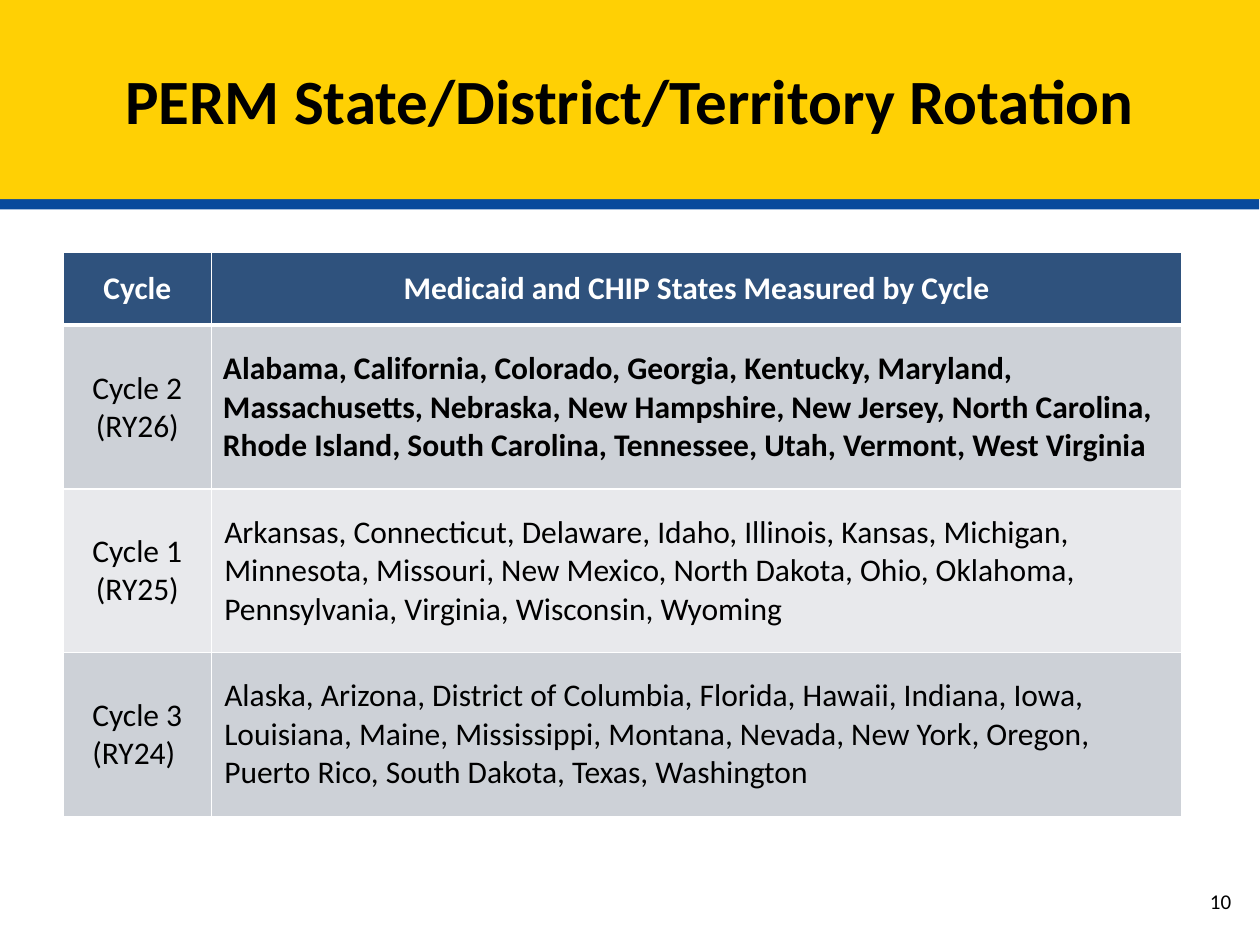
import pptx
import pptx.util
import pptx.dml.color
import pptx.enum.shapes
import pptx.enum.text
import pptx.oxml
import pptx.oxml.ns

Inches = pptx.util.Inches
Pt = pptx.util.Pt
RGBColor = pptx.dml.color.RGBColor
ALIGN = pptx.enum.text.PP_ALIGN
MIDDLE = pptx.enum.text.MSO_ANCHOR.MIDDLE
THEME = {
    "font": "Calibri",
    "banner": "FFD004", "banner_edge": "084A9C",
    "header": "2F527D", "bands": ["CDD1D7", "E8E9EC"],
    "ink": "000000", "paper": "FFFFFF",
    "title": Pt(36), "body": Pt(18), "footer": Pt(12),
}


def write(frame, lines, align, size, bold=False, color="ink"):
    font_format = {"name": THEME["font"], "size": THEME[size], "bold": bold}
    for index, line in enumerate(lines):
        paragraph = frame.add_paragraph() if index else frame.paragraphs[0]
        paragraph.alignment = align
        run = paragraph.add_run()
        run.text = line
        for attribute, value in font_format.items():
            setattr(run.font, attribute, value)
        run.font.color.rgb = RGBColor.from_string(THEME[color])


def add_borders(cell, widths):
    for position, (side, width) in enumerate(widths.items()):
        border = pptx.oxml.parse_xml(
            f'<a:ln{side} {pptx.oxml.ns.nsdecls("a")} w="{Pt(width)}"><a:solidFill>'
            f'<a:srgbClr val="{THEME["paper"]}"/></a:solidFill></a:ln{side}>')
        cell._tc.get_or_add_tcPr().insert(position, border)


deck = pptx.Presentation()
deck.slide_width, deck.slide_height = Inches(10), Inches(7.5)
slide = deck.slides.add_slide(deck.slide_layouts[6])

banner = slide.shapes.add_shape(
    pptx.enum.shapes.MSO_SHAPE.RECTANGLE, 0, 0, Inches(10), Inches(1.58))
banner.fill.solid()
banner.fill.fore_color.rgb = RGBColor.from_string(THEME["banner"])
banner.line.fill.background()
banner.shadow.inherit = False
banner_effects = banner._element.spPr.find(pptx.oxml.ns.qn("a:effectLst"))
banner_effects.append(pptx.oxml.parse_xml(
    f'<a:outerShdw {pptx.oxml.ns.nsdecls("a")} blurRad="0" dist="{Pt(6)}" '
    f'dir="{94 * 60000}" algn="t" rotWithShape="0">'
    f'<a:srgbClr val="{THEME["banner_edge"]}"/></a:outerShdw>'))
banner.text_frame.word_wrap = True
banner.text_frame.vertical_anchor = MIDDLE
write(banner.text_frame, ["PERM State/District/Territory Rotation"], ALIGN.CENTER, "title", True)

rotation = [
    (["Cycle"], "Medicaid and CHIP States Measured by Cycle"),
    (["Cycle 2", "(RY26)"],
     "Alabama, California, Colorado, Georgia, Kentucky, Maryland, Massachusetts, "
     "Nebraska, New Hampshire, New Jersey, North Carolina, Rhode Island, "
     "South Carolina, Tennessee, Utah, Vermont, West Virginia"),
    (["Cycle 1", "(RY25)"],
     "Arkansas, Connecticut, Delaware, Idaho, Illinois, Kansas, Michigan, Minnesota, "
     "Missouri, New Mexico, North Dakota, Ohio, Oklahoma, Pennsylvania, Virginia, "
     "Wisconsin, Wyoming"),
    (["Cycle 3", "(RY24) "],
     "Alaska, Arizona, District of Columbia, Florida, Hawaii, Indiana, Iowa, "
     "Louisiana, Maine, Mississippi, Montana, Nevada, New York, Oregon, Puerto Rico, "
     "South Dakota, Texas, Washington"),
]
cycles = slide.shapes.add_table(
    len(rotation), 2, Inches(0.5), Inches(2), Inches(8.88), Inches(4.48)).table
for column, width in zip(cycles.columns, [1.18, 7.7]):
    column.width = Inches(width)

for row, (cycle, states) in enumerate(rotation):
    is_header, is_current = row == 0, row == 1
    cycles.rows[row].height = Inches(0.58 if is_header else 1.3)
    band = THEME["header"] if is_header else THEME["bands"][(row - 1) % 2]
    for column, lines in enumerate([cycle, [states]]):
        cell = cycles.cell(row, column)
        insets = [0.1, 0.05, 0.1, 0.05]
        if is_current:
            insets = [0.09 if column else 0.01, 0.01, 0.01, 0]
        for side, inset in zip(["left", "top", "right", "bottom"], insets):
            setattr(cell, f"margin_{side}", Inches(inset))
        cell.vertical_anchor = MIDDLE
        cell.fill.solid()
        cell.fill.fore_color.rgb = RGBColor.from_string(band)
        add_borders(cell, {"L": 1, "R": 1, "T": 3 if is_current else 1,
                           "B": 3 if is_header else 1})
        write(cell.text_frame, lines,
              ALIGN.CENTER if is_header or column == 0 else ALIGN.LEFT, "body",
              is_header or (is_current and column == 1),
              "paper" if is_header else "ink")

page_number = slide.shapes.add_textbox(
    Inches(7.54), Inches(6.95), Inches(2.33), Inches(0.4)).text_frame
page_number.word_wrap = True
page_number.vertical_anchor = MIDDLE
write(page_number, ["10"], ALIGN.RIGHT, "footer")

deck.save("out.pptx")
